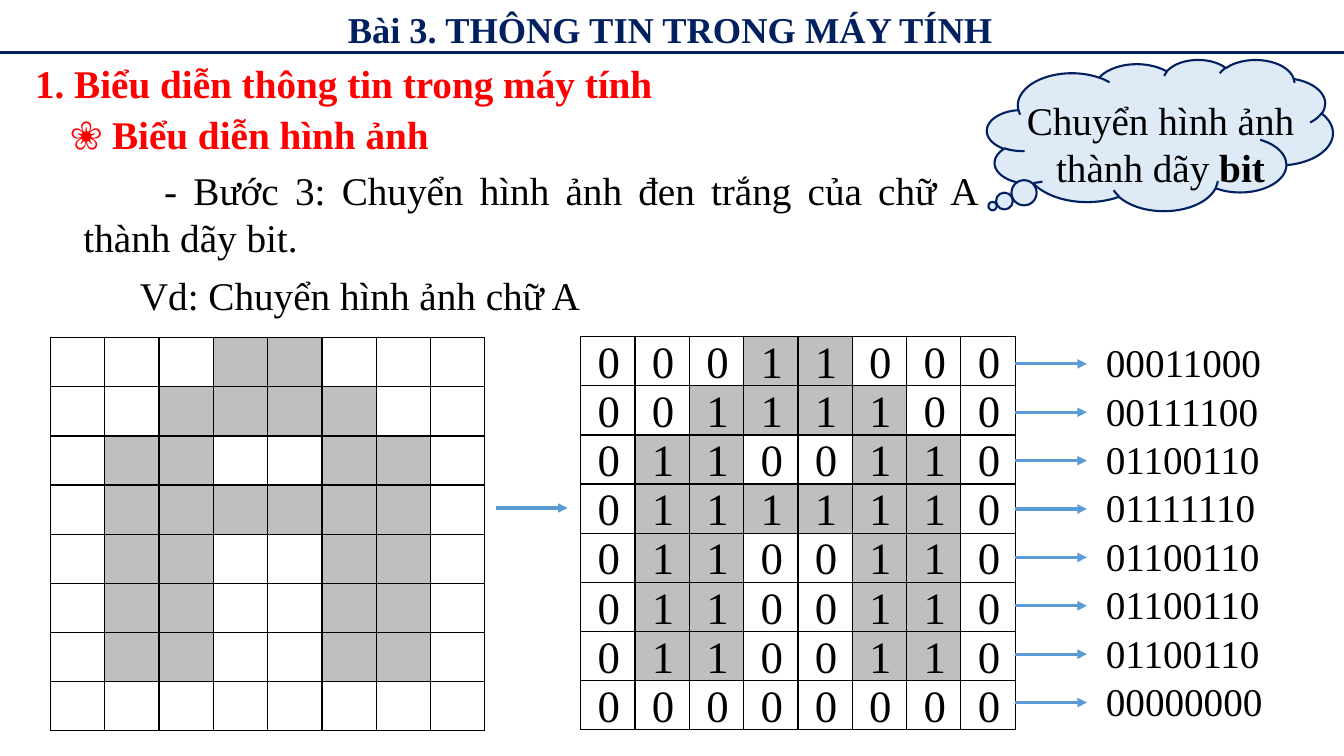
from dataclasses import dataclass

from lxml.etree import SubElement
from pptx import Presentation
from pptx.dml.color import RGBColor as RGB
from pptx.enum.shapes import MSO_CONNECTOR as CONN, MSO_SHAPE as SHAPE
from pptx.enum.text import MSO_ANCHOR as ANCHOR, MSO_AUTO_SIZE as FIT, PP_ALIGN as AL
from pptx.oxml.ns import qn
from pptx.util import Inches, Pt


@dataclass(frozen=True)
class Theme:
    font: str = "Times New Roman"
    navy: str = "002060"
    red: str = "FF0000"
    black: str = "000000"
    cloud: str = "DEEBF7"
    arrow: str = "5B9BD5"
    pixel: str = "BFBFBF"
    title: int = 26
    body: int = 28
    digit: int = 32
    rule: float = 2.25
    outline: float = 1.5


T = Theme()
W, H = 13.33, 7.5
LETTER_A = ["00011000", "00111100", "01100110", "01111110",
            "01100110", "01100110", "01100110", "00000000"]
N = len(LETTER_A)


def write(tf, runs, size=T.body, color=T.black, align=AL.LEFT, indent=0):
    """Write one paragraph of (text, bold) runs."""
    p = tf.paragraphs[0]
    p.alignment = align
    if indent:
        pPr = p._p.get_or_add_pPr()
        pPr.set("marL", "0")
        pPr.set("indent", str(Inches(indent)))
    for text, bold in runs:
        r = p.add_run()
        r.text = text
        for key, value in dict(name=T.font, size=Pt(size), bold=bold).items():
            setattr(r.font, key, value)
        r.font.color.rgb = RGB.from_string(color)


def text_box(s, box, runs, wrap=True, **style):
    tf = s.shapes.add_textbox(*map(Inches, box)).text_frame
    tf.word_wrap = wrap
    write(tf, runs, **style)


def line(s, x1, y1, x2, y2, color, arrow=False):
    c = s.shapes.add_connector(CONN.STRAIGHT, *map(Inches, (x1, y1, x2, y2)))
    c.line.color.rgb = RGB.from_string(color)
    c.line.width = Pt(T.rule)
    spPr = c.element.spPr
    if arrow:
        SubElement(spPr.find(qn("a:ln")), qn("a:tailEnd"), type="triangle")
    SubElement(spPr, qn("a:effectLst"))


def border(cell):
    tcPr = cell._tc.get_or_add_tcPr()
    for i, side in enumerate(("lnL", "lnR", "lnT", "lnB")):
        ln = tcPr.makeelement(qn(f"a:{side}"), {"w": str(Pt(1))})
        tcPr.insert(i, ln)
        fill = SubElement(ln, qn("a:solidFill"))
        SubElement(fill, qn("a:srgbClr"), val=T.black)


def header(s, x, y, w, h):
    """Lesson title above a full-width rule."""
    title = s.shapes.title
    box = dict(left=x, top=y, width=w, height=h)
    for key, value in box.items():
        setattr(title, key, Inches(value))
    tf = title.text_frame
    frame = dict(word_wrap=True, auto_size=FIT.NONE, vertical_anchor=ANCHOR.TOP)
    for key, value in frame.items():
        setattr(tf, key, value)
    write(tf, [("Bài 3. THÔNG TIN TRONG MÁY TÍNH", True)],
          size=T.title, color=T.navy, align=AL.CENTER)
    line(s, 0, y + 0.5, W, y + 0.5, T.navy)


def lesson(s, x, y):
    """Section headings, the step and its example."""
    heading = dict(wrap=False, color=T.red)
    text_box(s, (x, y, 6.4, 0.57),
             [("1. Biểu diễn thông tin trong máy tính", True)], **heading)
    text_box(s, (x + 0.35, y + 0.51, 3.83, 0.57),
             [("❀ Biểu diễn hình ảnh", True)], **heading)
    text_box(s, (x + 0.48, y + 1.06, 9.06, 1.04),
             [("- Bước 3: Chuyển hình ảnh đen trắng của chữ A thành dãy bit.", False)],
             align=AL.JUSTIFY, indent=0.8)
    text_box(s, (x + 0.65, y + 2.1, 5.26, 0.57),
             [("Vd: Chuyển hình ảnh chữ A", False)], align=AL.JUSTIFY, indent=0.39)


def cloud(s, x, y, w, h):
    """Thought cloud with the goal of the step."""
    sp = s.shapes.add_shape(SHAPE.CLOUD_CALLOUT, *map(Inches, (x, y, w, h)))
    sp.shadow.inherit = False
    sp.adjustments[0], sp.adjustments[1] = -0.484, 0.47
    sp.fill.solid()
    sp.fill.fore_color.rgb = RGB.from_string(T.cloud)
    sp.line.color.rgb = RGB.from_string(T.navy)
    sp.line.width = Pt(T.outline)
    text_box(s, (x + 0.28, y + 0.32, 2.88, 1.04),
             [("Chuyển hình ảnh thành dãy ", False), ("bit", True)], align=AL.CENTER)


def pixel_grid(s, x, y, w, h, digits=False):
    """Letter A as shaded cells, with its bits on top if asked."""
    col, row = w / N, h / N
    table = s.shapes.add_table(N, N, *map(Inches, (x, y, w, h))).table
    table.first_row = table.horz_banding = False
    for i, bits in enumerate(LETTER_A):
        table.rows[i].height = Inches(row)
        table.columns[i].width = Inches(col)
        for j, bit in enumerate(bits):
            cell = table.cell(i, j)
            if bit == "1":
                cell.fill.solid()
                cell.fill.fore_color.rgb = RGB.from_string(T.pixel)
            else:
                cell.fill.background()
            border(cell)
            if digits:
                text_box(s, (x + (j + 0.5) * col - 0.2, y + i * row - 0.08, 0.4, 0.64),
                         [(bit, False)], size=T.digit, align=AL.CENTER)


def bit_rows(s, x, y, pitch):
    """An arrow and a bit string for each row of the grid."""
    for i, bits in enumerate(LETTER_A):
        mid = y + i * pitch
        line(s, x, mid, x + 0.71, mid, T.arrow, arrow=True)
        text_box(s, (x + 0.8, mid - 0.3, 1.93, 0.57), [(bits, False)], align=AL.JUSTIFY)


def main():
    prs = Presentation()
    prs.slide_width, prs.slide_height = Inches(W), Inches(H)
    s = prs.slides.add_slide(prs.slide_layouts[5])
    header(s, 0.32, 0.02, 12.66, 0.54)
    lesson(s, 0.25, 0.54)
    cloud(s, 9.79, 0.59, 3.43, 1.5)
    pixel_grid(s, 0.5, 3.35, 4.31, 3.9)
    line(s, 4.92, 5.04, 5.63, 5.04, T.arrow, arrow=True)
    pixel_grid(s, 5.76, 3.34, 4.31, 3.9, digits=True)
    bit_rows(s, 10.07, 3.61, 0.48)
    prs.save("out.pptx")


if __name__ == "__main__":
    main()
